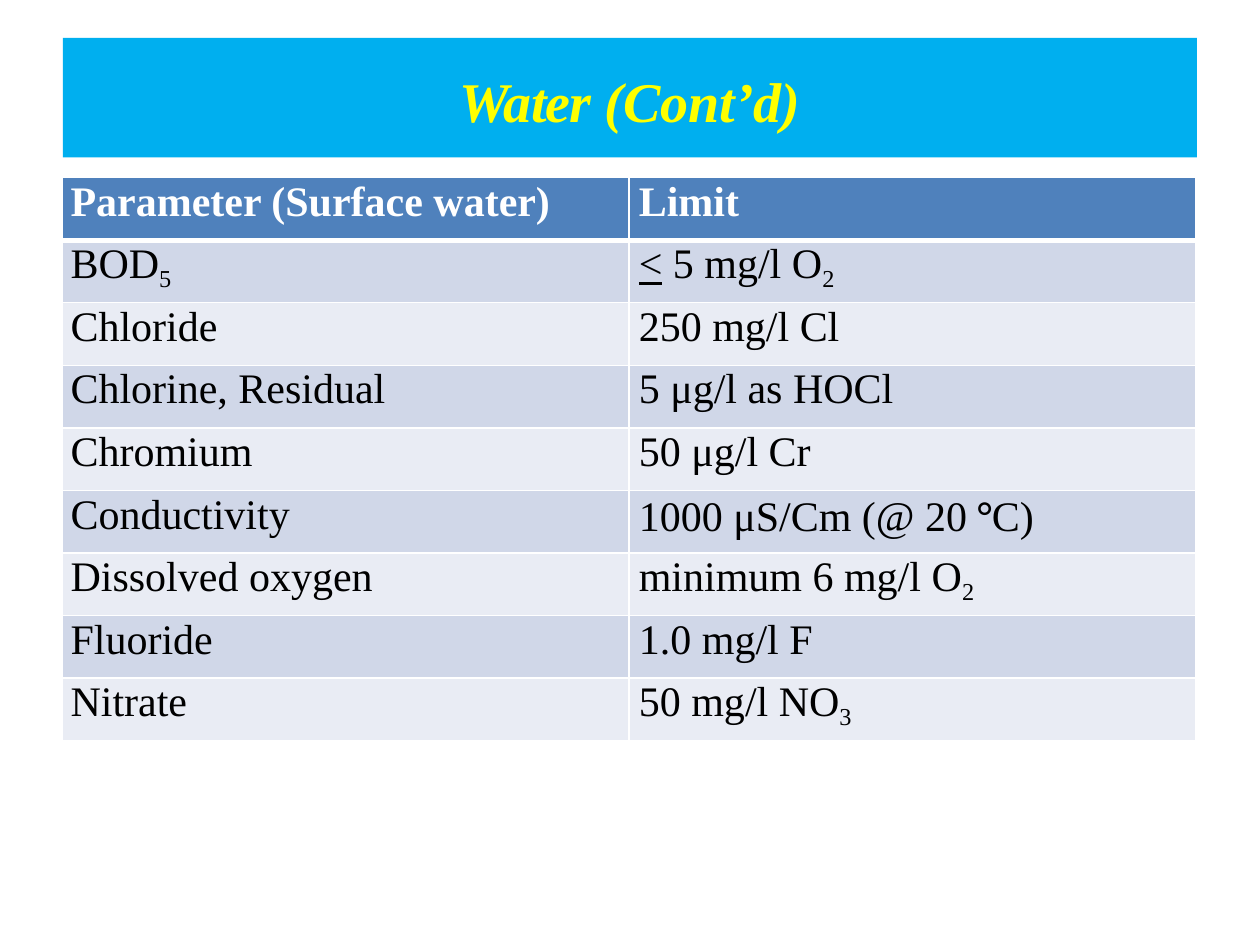
from dataclasses import dataclass

import pptx
import pptx.dml.color
import pptx.enum.shapes
import pptx.enum.text
import pptx.oxml
import pptx.oxml.ns
import pptx.util
from pptx.util import Inches


@dataclass(frozen=True)
class Theme:
    """Colours, fonts and type sizes of the slide."""
    font: str = "Times New Roman"
    symbol_font: str = "Calibri"
    title_size: int = 32
    body_size: int = 24
    banner: str = "00AFEF"
    title: str = "FFFF00"
    header: str = "4F81BC"
    bands: tuple = ("D0D7E8", "E9ECF4")
    light: str = "FFFFFF"
    dark: str = "000000"


THEME = Theme()
SUB = {"baseline": -21000}
ROWS = [
    (["Parameter (Surface water)"], ["Limit"]),
    (["BOD", ("5", SUB)],
     [("<", {"underline": True}), " 5 mg/l O", ("2", SUB)]),
    (["Chloride"], ["250 mg/l Cl"]),
    (["Chlorine, Residual"], ["5 μg/l as HOCl"]),
    (["Chromium"], ["50 μg/l Cr"]),
    (["Conductivity"],
     ["1000 μS/Cm (@ 20 ", ("°", {"font": THEME.symbol_font}), "C)"]),
    (["Dissolved oxygen"], ["minimum 6 mg/l O", ("2", SUB)]),
    (["Fluoride"], ["1.0 mg/l F"]),
    (["Nitrate"], ["50 mg/l NO", ("3", SUB)]),
]


def rgb(value):
    """Return a colour object for a hex string."""
    return pptx.dml.color.RGBColor.from_string(value)


def fill(target, color):
    """Fill a shape or cell with one colour."""
    target.fill.solid()
    target.fill.fore_color.rgb = rgb(color)


def add_text(p, text, size=THEME.body_size, color=THEME.dark, font=THEME.font,
             bold=False, italic=False, underline=False, baseline=0, spacing=0):
    """Append a formatted run to a paragraph."""
    r = p.add_run()
    r.text = text
    r.font.size = pptx.util.Pt(size)
    r.font.name = font
    r.font.color.rgb = rgb(color)
    r.font.bold, r.font.italic, r.font.underline = bold, italic, underline
    for name, value in (("baseline", baseline), ("spc", spacing)):
        if value:
            r.font._element.set(name, str(value))


def set_borders(cell, **widths):
    """Draw light borders of the given point widths around a cell."""
    tc_pr = cell._tc.get_or_add_tcPr()
    for i, (side, width) in enumerate(widths.items()):
        tc_pr.insert(i, pptx.oxml.parse_xml(
            f'<a:ln{side} {pptx.oxml.ns.nsdecls("a")} w="{pptx.util.Pt(width)}">'
            f'<a:solidFill><a:srgbClr val="{THEME.light}"/></a:solidFill>'
            f'</a:ln{side}>'))


def add_banner(s, left, top, width, height):
    """Place the title on its coloured banner."""
    sp = s.shapes.add_shape(pptx.enum.shapes.MSO_SHAPE.RECTANGLE,
                            left, top, width, height)
    sp.shadow.inherit = False
    fill(sp, THEME.banner)
    sp.line.fill.background()
    tf = sp.text_frame
    tf.word_wrap = True
    tf.margin_left = tf.margin_right = tf.margin_bottom = 0
    tf.margin_top = Inches(0.04)
    tf.vertical_anchor = pptx.enum.text.MSO_ANCHOR.MIDDLE
    p = tf.paragraphs[0]
    p.alignment = pptx.enum.text.PP_ALIGN.CENTER
    style = {"size": THEME.title_size, "color": THEME.title,
             "bold": True, "italic": True}
    add_text(p, "Water ", spacing=-50, **style)
    add_text(p, "(Cont’d)", **style)


def add_limits(s, left, top, width, height):
    """Place the table of surface water limits."""
    table = s.shapes.add_table(len(ROWS), 2, left, top, width, height).table
    for i, row in enumerate(ROWS):
        table.rows[i].height = height // len(ROWS)
        header = i == 0
        style = {"color": THEME.light, "bold": True} if header else {}
        for j, parts in enumerate(row):
            cell = table.cell(i, j)
            fill(cell, THEME.header if header else THEME.bands[(i - 1) % 2])
            set_borders(cell, L=1, R=1, T=3 if i == 1 else 1, B=3 if header else 1)
            cell.margin_left = Inches(0.07 + 0.01 * j)
            cell.margin_right = cell.margin_bottom = 0
            cell.margin_top = Inches(0.01)
            p = cell.text_frame.paragraphs[0]
            p.space_before = pptx.util.Pt(0.8)
            for part in parts:
                text, extra = (part, {}) if isinstance(part, str) else part
                add_text(p, text, **style, **extra)


def main():
    """Build and save the slide."""
    prs = pptx.Presentation()
    prs.slide_width, prs.slide_height = Inches(10), Inches(7.5)
    s = prs.slides.add_slide(prs.slide_layouts[6])
    add_limits(s, Inches(0.49), Inches(1.41), Inches(9), Inches(4.47))
    add_banner(s, Inches(0.5), Inches(0.3), Inches(9), Inches(0.95))
    prs.save("out.pptx")


if __name__ == "__main__":
    main()
